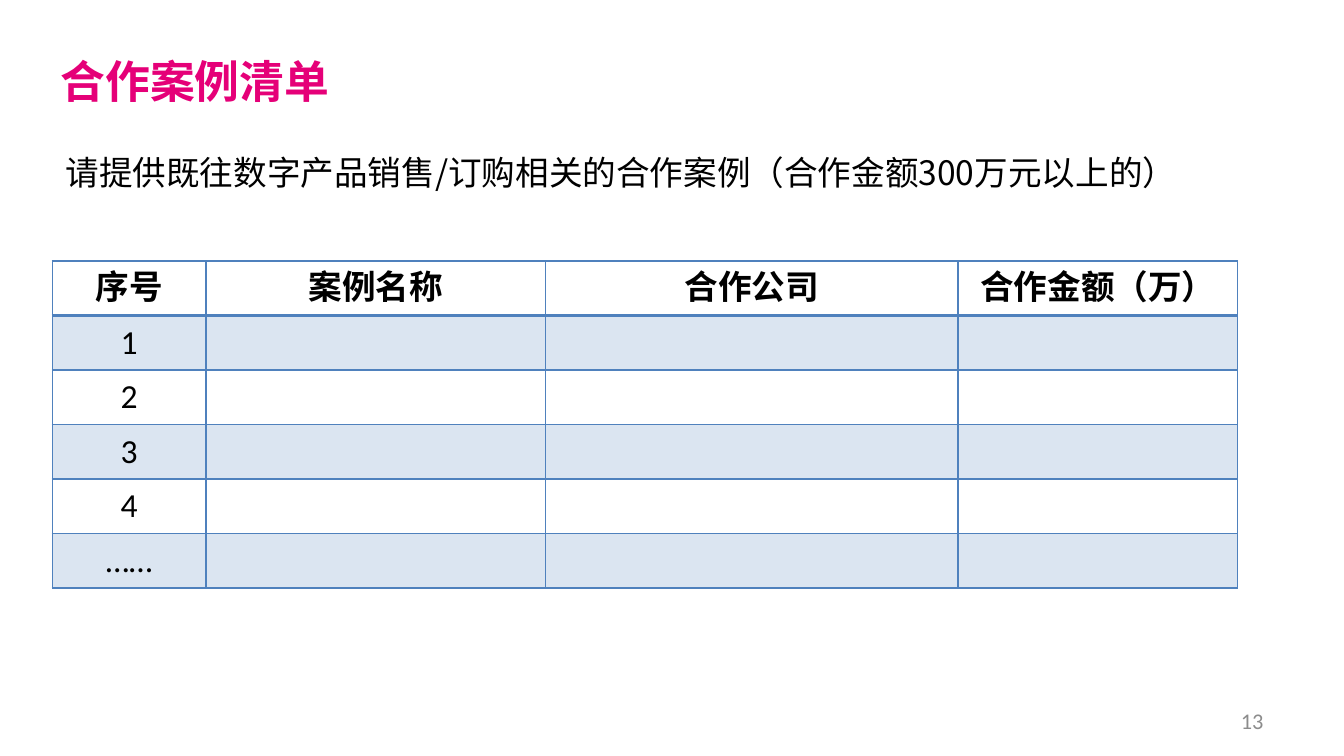
import pptx
import pptx.util
import pptx.dml.color
import pptx.enum.text
import pptx.oxml
import pptx.oxml.ns
from lxml import etree

Cm, Pt = pptx.util.Cm, pptx.util.Pt
ALIGN, ANCHOR = pptx.enum.text.PP_ALIGN, pptx.enum.text.MSO_ANCHOR
COLORS = {"title": "E50078", "text": "000000", "number": "8C8C8C", "table": "4F81BD"}
CJK = "Noto Sans CJK SC"


def format_runs(p, size, font, color, bold=False):
    """Format every run, using one font for Latin and East Asian text."""
    for r in p.runs:
        r.font.size, r.font.bold, r.font.name = Pt(size), bold, font
        r.font.color.rgb = pptx.dml.color.RGBColor.from_string(COLORS[color])
        ea = etree.SubElement(r.font._element, pptx.oxml.ns.qn("a:ea"))
        ea.set("typeface", font)


def add_borders(cell, widths):
    """Draw cell borders; widths maps the sides L, R, T, B to points."""
    tcPr = cell._tc.get_or_add_tcPr()
    for side, width in widths.items():
        tcPr.append(pptx.oxml.parse_xml(
            f'<a:ln{side} {pptx.oxml.ns.nsdecls("a")} w="{Pt(width)}"><a:solidFill>'
            f'<a:srgbClr val="{COLORS["table"]}"/></a:solidFill></a:ln{side}>'))


prs = pptx.Presentation()
prs.slide_width, prs.slide_height = Cm(25.4), Cm(14.28)
s = prs.slides.add_slide(prs.slide_layouts[5])

# Title
sp = s.shapes.title
sp.left, sp.top, sp.width, sp.height = Cm(0.89), Cm(0.91), Cm(13.41), Cm(1.57)
tf = sp.text_frame
tf.text = "合作案例清单"
tf.vertical_anchor, tf.margin_top = ANCHOR.TOP, Cm(0.1)
p = tf.paragraphs[0]
p.alignment = ALIGN.LEFT
format_runs(p, 24, CJK, "title", True)

# Request
sp = s.shapes.add_textbox(Cm(0.99), Cm(2.51), Cm(22.4), Cm(2.44))
tf = sp.text_frame
tf.word_wrap = True
tf.text = "请提供既往数字产品销售/订购相关的合作案例（合作金额300万元以上的）"
p = tf.paragraphs[0]
p.line_spacing = 1.3
format_runs(p, 18, CJK, "text")

# Case table
headers = ["序号", "案例名称", "合作公司", "合作金额（万）"]
numbers = ["1", "2", "3", "4", "……"]
rows = [headers] + [[n, "", "", ""] for n in numbers]
widths = [2.9, 6.42, 7.8, 5.28]
row_height = 1.03
table = s.shapes.add_table(len(rows), len(headers), Cm(0.99), Cm(4.93),
                           Cm(sum(widths)), Cm(row_height * len(rows))).table
table.first_row = table.horz_banding = False
for column, width in zip(table.columns, widths):
    column.width = Cm(width)
for i, texts in enumerate(rows):
    table.rows[i].height = Cm(row_height)
    for j, text in enumerate(texts):
        cell = table.cell(i, j)
        add_borders(cell, {"L": 1, "R": 1, "T": 2 if i == 1 else 1, "B": 2 if i == 0 else 1})
        if i % 2:
            cell.fill.solid()
            cell.fill.fore_color.rgb = pptx.dml.color.RGBColor.from_string(COLORS["table"])
            color = cell._tc.tcPr.find("a:solidFill/a:srgbClr", pptx.oxml.ns._nsmap)
            etree.SubElement(color, pptx.oxml.ns.qn("a:alpha")).set("val", "20000")
        else:
            cell.fill.background()
        if text:
            cell.text_frame.text = text
            p = cell.text_frame.paragraphs[0]
            p.alignment = ALIGN.CENTER
            format_runs(p, 18, "Calibri", "text", i == 0)

# Page number
sp = s.shapes.add_textbox(Cm(18.21), Cm(13.23), Cm(5.92), Cm(0.76))
tf = sp.text_frame
tf.word_wrap = True
tf.vertical_anchor = ANCHOR.MIDDLE
tf.text = "13"
p = tf.paragraphs[0]
p.alignment = ALIGN.RIGHT
format_runs(p, 12, "Calibri", "number")

prs.save("out.pptx")
